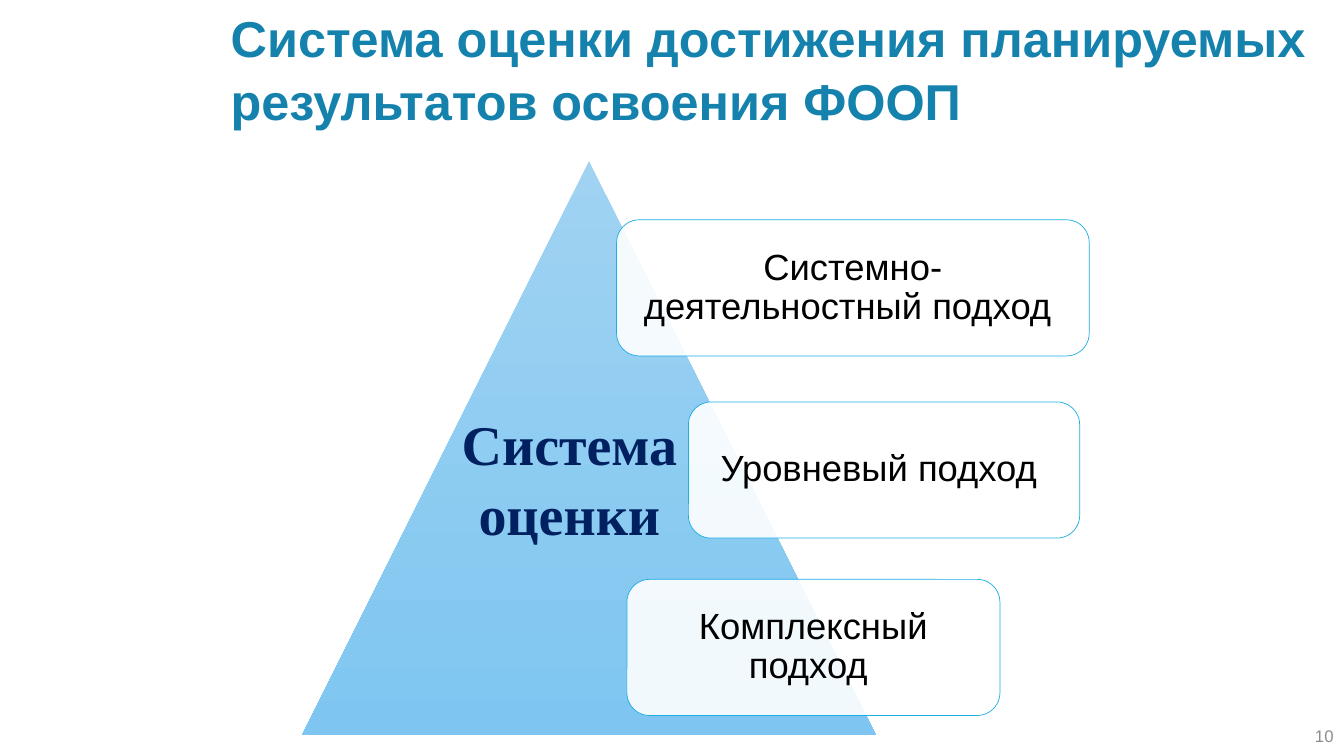
from pptx import Presentation
from pptx.dml.color import RGBColor
from pptx.enum.shapes import MSO_SHAPE as Shape
from pptx.enum.text import MSO_ANCHOR as Anchor, MSO_AUTO_SIZE as Fit, PP_ALIGN as Align
from pptx.util import Cm, Pt
from lxml.etree import SubElement
from pptx.oxml.ns import qn

TEAL = RGBColor(0x14, 0x82, 0xAC)
NAVY = RGBColor(0x00, 0x20, 0x60)
GRAY = RGBColor(0x8C, 0x8C, 0x8C)
BLACK = RGBColor(0, 0, 0)
WHITE = RGBColor(0xFF, 0xFF, 0xFF)
EDGE = RGBColor(0x1C, 0xAD, 0xE4)
LIGHT = RGBColor(0xA0, 0xD3, 0xF2)
DEEP = RGBColor(0x7E, 0xC6, 0xF1)


def write(shape, text, size, color, align, anchor, font="Arial", bold=False, space=1.0):
    frame = shape.text_frame
    frame.text = text
    frame.word_wrap = True
    frame.auto_size = Fit.NONE
    frame.vertical_anchor = anchor
    para = frame.paragraphs[0]
    para.alignment = align
    para.line_spacing = space
    for run in para.runs:
        run.font.name = font
        run.font.size = Pt(size)
        run.font.bold = bold
        run.font.color.rgb = color


deck = Presentation()
deck.slide_width, deck.slide_height = Cm(33.87), Cm(19.05)
slide = deck.slides.add_slide(deck.slide_layouts[5])

title = slide.shapes.title
title.left, title.top, title.width, title.height = Cm(5.56), Cm(-0.03), Cm(29.18), Cm(3.33)
write(title, "Система оценки достижения планируемых результатов освоения ФООП",
      36, TEAL, Align.LEFT, Anchor.TOP, bold=True, space=1.05)

number = slide.shapes.add_textbox(Cm(27.94), Cm(18.03), Cm(5.92), Cm(1.02))
write(number, "10", 12, GRAY, Align.RIGHT, Anchor.MIDDLE)

peak = slide.shapes.add_shape(Shape.ISOSCELES_TRIANGLE, Cm(7.62), Cm(4.06), Cm(14.45), Cm(14.45))
peak.shadow.inherit = False
peak.line.fill.background()
peak.fill.gradient()
peak.fill.gradient_angle = 270
for stop, color in zip(peak.fill.gradient_stops, (LIGHT, DEEP)):
    stop.color.rgb = color

cards = [
    ("Системно-деятельностный подход ", 15.54, 5.54, 11.91),
    ("Уровневый подход ", 17.35, 10.13, 9.86),
    ("Комплексный подход ", 15.8, 14.6, 9.4),
]
for text, left, top, width in cards:
    card = slide.shapes.add_shape(Shape.ROUNDED_RECTANGLE, Cm(left), Cm(top), Cm(width), Cm(3.43))
    card.shadow.inherit = False
    card.fill.solid()
    card.fill.fore_color.rgb = WHITE
    tint = card.fill._xPr.find(qn("a:solidFill")).find(qn("a:srgbClr"))
    SubElement(tint, qn("a:alpha")).set("val", "90000")
    card.line.color.rgb = EDGE
    card.line.width = Pt(0.5)
    write(card, text, 26, BLACK, Align.CENTER, Anchor.MIDDLE, space=0.9)
    card.text_frame.margin_left = card.text_frame.margin_right = Cm(0.28)

label = slide.shapes.add_textbox(Cm(10.87), Cm(10.11), Cm(6.96), Cm(4.88))
write(label, "Система оценки", 40, NAVY, Align.CENTER, Anchor.TOP,
      font="Times New Roman", bold=True, space=1.05)

deck.save("out.pptx")
